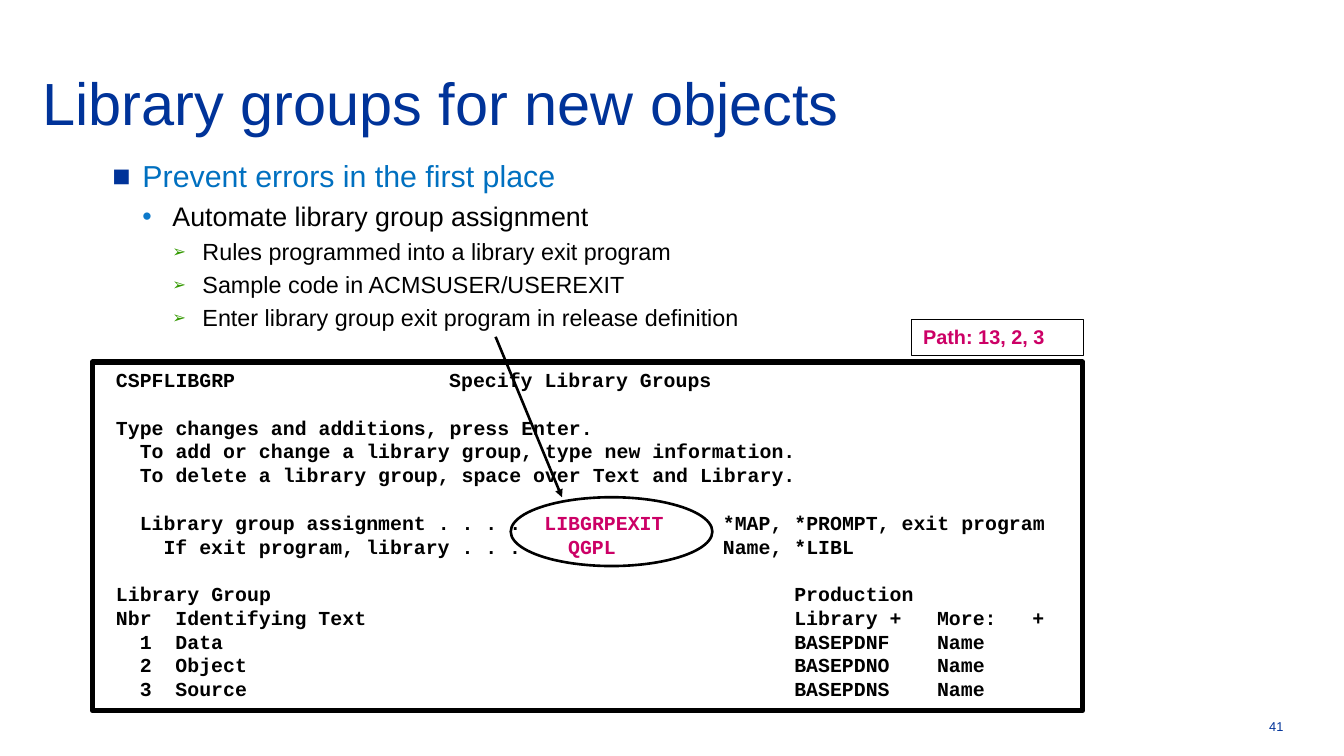
from dataclasses import dataclass

from pptx import Presentation
from pptx.dml.color import RGBColor
from pptx.enum.shapes import MSO_CONNECTOR, MSO_SHAPE
from pptx.enum.text import MSO_ANCHOR, MSO_AUTO_SIZE, PP_ALIGN
from pptx.oxml.ns import qn
from pptx.util import Pt
from lxml.etree import SubElement


@dataclass(frozen=True)
class Theme:
    sans: str = "Arial"
    mono: str = "Courier New"
    navy: str = "003399"
    blue: str = "0070C0"
    sky: str = "0D79CA"
    green: str = "339900"
    pink: str = "CC0066"
    black: str = "000000"
    white: str = "FFFFFF"
    title_size: float = 51
    code_size: float = 17
    number_size: float = 11
    inset: tuple = (10, 5)


THEME = Theme()
CHAR_WIDTH = 10.2  # one column of the terminal screen
LINE_HEIGHT = 20.4
INDENT_STEP = 25.7


@dataclass(frozen=True)
class Level:
    size: float
    color: str
    bullet: str
    bullet_color: str
    bullet_scale: int
    space_before: float


@dataclass(frozen=True)
class Cell:
    column: int
    text: str
    color: str = THEME.black


@dataclass(frozen=True)
class Row:
    cells: tuple[Cell, ...]
    blank_above: bool = False


LEVELS = (
    Level(26, THEME.blue, "■", THEME.navy, 100, 0),
    Level(23, THEME.black, "•", THEME.sky, 100, 8),
    Level(20, THEME.black, "➢", THEME.green, 70, 6.8),
)

POINTS = (
    (0, "Prevent errors in the first place"),
    (1, "Automate library group assignment"),
    (2, "Rules programmed into a library exit program"),
    (2, "Sample code in ACMSUSER/USEREXIT"),
    (2, "Enter library group exit program in release definition"),
)

GROUPS = (("1", "Data", "BASEPDNF"), ("2", "Object", "BASEPDNO"), ("3", "Source", "BASEPDNS"))

SCREEN = (
    Row((Cell(1, "CSPFLIBGRP"), Cell(29, "Specify Library Groups"))),
    Row((Cell(1, "Type changes and additions, press Enter."),), True),
    Row((Cell(3, "To add or change a library group, type new information."),)),
    Row((Cell(3, "To delete a library group, space over Text and Library."),)),
    Row((Cell(3, "Library group assignment . . . ."), Cell(37, "LIBGRPEXIT", THEME.pink),
         Cell(52, "*MAP, *PROMPT, exit program")), True),
    Row((Cell(5, "If exit program, library . . ."), Cell(39, "QGPL", THEME.pink),
         Cell(52, "Name, *LIBL"))),
    Row((Cell(1, "Library Group"), Cell(58, "Production")), True),
    Row((Cell(1, "Nbr"), Cell(6, "Identifying Text"), Cell(58, "Library +"),
         Cell(70, "More:"), Cell(78, "+"))),
    *(Row((Cell(3, number), Cell(6, text), Cell(58, library), Cell(70, "Name")))
      for number, text, library in GROUPS),
)


def write(para, text: str, *, size: float, color: str, font: str = THEME.sans,
          bold: bool = False) -> None:
    span = para.add_run()
    span.text = text
    span.font.name = font
    span.font.size = Pt(size)
    span.font.bold = bold
    span.font.color.rgb = RGBColor.from_string(color)


def place(shape, left: float, top: float, width: float, height: float) -> None:
    shape.left, shape.top, shape.width, shape.height = map(Pt, (left, top, width, height))


def prepare_frame(shape, anchor=MSO_ANCHOR.TOP):
    frame = shape.text_frame
    frame.word_wrap = True
    frame.auto_size = MSO_AUTO_SIZE.NONE
    frame.vertical_anchor = anchor
    side, edge = map(Pt, THEME.inset)
    frame.margin_left = frame.margin_right = side
    frame.margin_top = frame.margin_bottom = edge
    frame.paragraphs[0].alignment = PP_ALIGN.LEFT
    return frame


def next_para(frame, index: int):
    para = frame.paragraphs[0] if index == 0 else frame.add_paragraph()
    para.alignment = PP_ALIGN.LEFT
    return para


def add_outline(page, kind, box: tuple, line_width: float, fill: str | None = None):
    shape = page.shapes.add_shape(kind, *map(Pt, box))
    shape.shadow.inherit = False
    if fill:
        shape.fill.solid()
        shape.fill.fore_color.rgb = RGBColor.from_string(fill)
    else:
        shape.fill.background()
    shape.line.color.rgb = RGBColor.from_string(THEME.black)
    shape.line.width = Pt(line_width)
    return shape


def add_points(body) -> None:
    frame = prepare_frame(body)
    for index, (depth, text) in enumerate(POINTS):
        level = LEVELS[depth]
        para = next_para(frame, index)
        para.level = depth
        properties = para._p.get_or_add_pPr()
        properties.set("marL", str(Pt(INDENT_STEP * (depth + 1))))
        properties.set("indent", str(-Pt(INDENT_STEP)))
        bullet_color = SubElement(properties, qn("a:buClr"))
        SubElement(bullet_color, qn("a:srgbClr"), val=level.bullet_color)
        SubElement(properties, qn("a:buSzPct"), val=str(level.bullet_scale * 1000))
        SubElement(properties, qn("a:buFont"), typeface=THEME.sans)
        SubElement(properties, qn("a:buChar"), char=level.bullet)
        para.line_spacing = 0.9
        para.space_before = Pt(level.space_before)
        write(para, text, size=level.size, color=level.color)


def add_screen(page) -> None:
    shape = add_outline(page, MSO_SHAPE.RECTANGLE, (79.2, 310.3, 848.9, 298.8), 4.5, THEME.white)
    frame = prepare_frame(shape)
    for index, row in enumerate(SCREEN):
        para = next_para(frame, index)
        tabs = SubElement(para._p.get_or_add_pPr(), qn("a:tabLst"))
        for cell in row.cells:
            SubElement(tabs, qn("a:tab"), pos=str(Pt(cell.column * CHAR_WIDTH)), algn="l")
        para.line_spacing = Pt(LINE_HEIGHT)
        para.space_before = Pt(LINE_HEIGHT if row.blank_above else 0)
        for cell in row.cells:
            write(para, "\t" + cell.text, size=THEME.code_size, color=cell.color,
                  font=THEME.mono, bold=True)


def add_arrow(page, start: tuple, end: tuple) -> None:
    arrow = page.shapes.add_connector(MSO_CONNECTOR.STRAIGHT, *map(Pt, start + end))
    arrow.line.color.rgb = RGBColor.from_string(THEME.black)
    arrow.line.width = Pt(2.25)
    SubElement(arrow.line._get_or_add_ln(), qn("a:tailEnd"), type="triangle")
    SubElement(arrow._element.spPr, qn("a:effectLst"))


def main() -> None:
    deck = Presentation()
    deck.slide_width, deck.slide_height = Pt(1152), Pt(648)
    page = deck.slides.add_slide(deck.slide_layouts[1])

    # Title and list
    title, body = page.placeholders
    place(title, 28.8, 42.5, 1000.8, 89.3)
    frame = prepare_frame(title, MSO_ANCHOR.MIDDLE)
    frame.margin_left = Pt(7.2)
    write(frame.paragraphs[0], "Library groups for new objects",
          size=THEME.title_size, color=THEME.navy)
    place(body, 86.4, 133.2, 979.2, 158.4)
    add_points(body)

    # Terminal screen with the marked exit program
    add_screen(page)
    add_outline(page, MSO_SHAPE.OVAL, (437.8, 426.2, 172.8, 59), 2.25)
    add_arrow(page, (424.8, 288.7), (481.7, 426.2))

    # Menu path
    label = add_outline(page, MSO_SHAPE.RECTANGLE, (781.2, 273.6, 147.6, 31), 1, THEME.white)
    write(prepare_frame(label).paragraphs[0], "Path: 13, 2, 3",
          size=THEME.code_size, color=THEME.pink, bold=True)

    # Page number
    number = page.shapes.add_textbox(*map(Pt, (1063.4, 611.3, 46.8, 22.3)))
    para = prepare_frame(number).paragraphs[0]
    para.alignment = PP_ALIGN.RIGHT
    write(para, "41", size=THEME.number_size, color=THEME.navy)

    deck.save("out.pptx")


if __name__ == "__main__":
    main()
